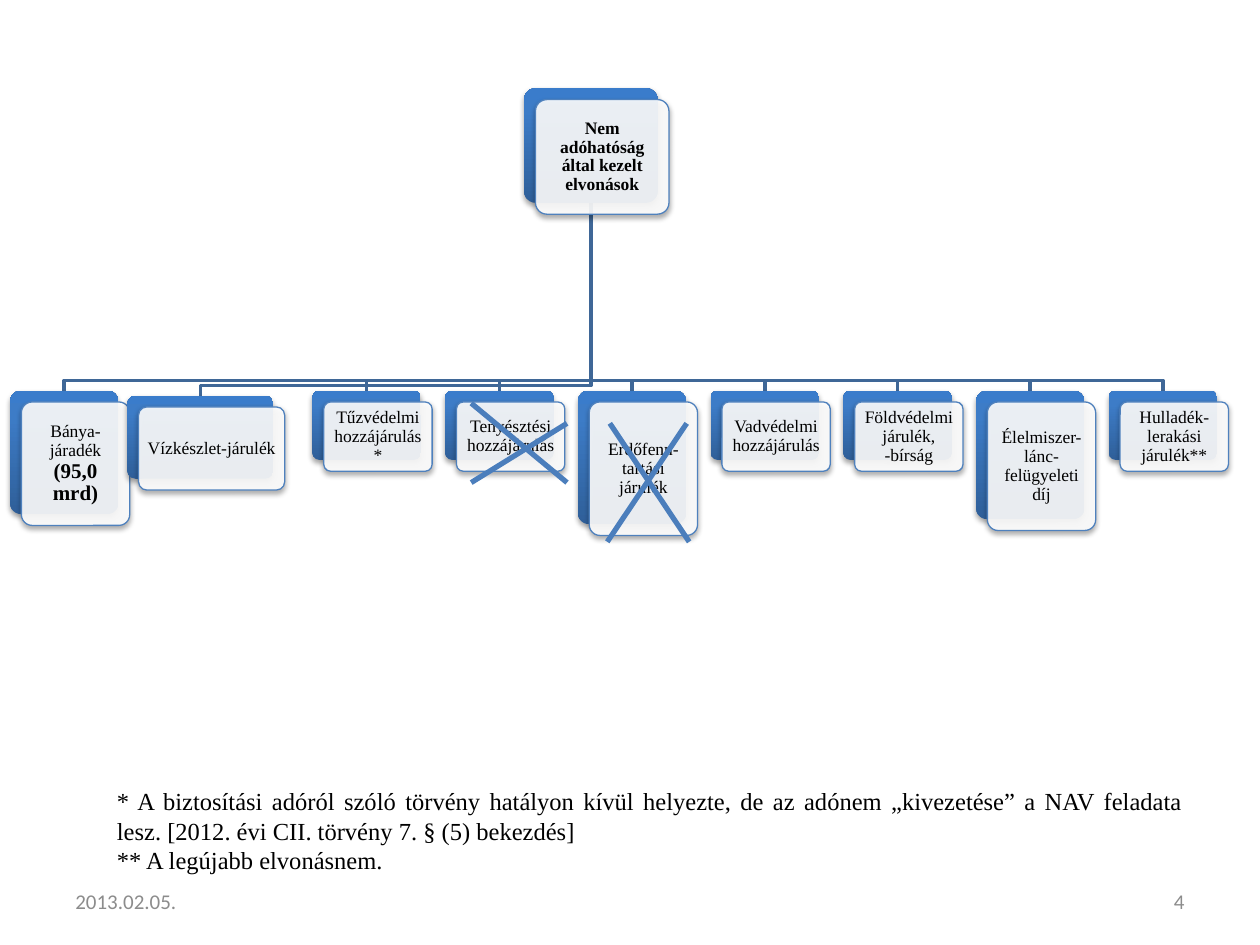
import copy

import pptx
import pptx.dml.color
import pptx.enum.shapes
import pptx.enum.text
import pptx.oxml
import pptx.oxml.ns
import pptx.util

Inches = pptx.util.Inches
Pt = pptx.util.Pt
RGB = pptx.dml.color.RGBColor
Align = pptx.enum.text.PP_ALIGN
Anchor = pptx.enum.text.MSO_ANCHOR
Kind = pptx.enum.shapes.MSO_SHAPE
qn = pptx.oxml.ns.qn
NS = pptx.oxml.ns.nsdecls("a")

# Colours
BLACK = RGB(0x00, 0x00, 0x00)
WHITE = RGB(0xFF, 0xFF, 0xFF)
GREY = RGB(0x8C, 0x8C, 0x8C)
EDGE = RGB(0x4F, 0x81, 0xBD)
LINK = RGB(0x3F, 0x67, 0x97)
CROSS = RGB(0x4B, 0x7E, 0xBC)
STOPS = [(0, RGB(0x2F, 0x5F, 0x99)), (0.8, RGB(0x3D, 0x7C, 0xC7)),
         (1, RGB(0x3A, 0x7C, 0xCB))]

# Text formats
SERIF = {"name": "Times New Roman", "size": Pt(10)}
BOLD = {**SERIF, "bold": True}
BIG = {**BOLD, "size": Pt(12)}
NOTE = {**SERIF, "size": Pt(14)}
FOOT = {"name": "Calibri", "size": Pt(12)}
PAD = {"margin_left": Pt(3), "margin_right": Pt(3), "margin_top": Pt(3),
       "margin_bottom": Pt(3)}

# Chart layout in inches
SHIFT = 0.09
WIDE, LOW = 0.86, 0.55
TOP = 3.1
FIRST, STEP = 2.48, 6.32 / 6
ROOT = (4.16, 0.7, 1.06, 0.91)

# Left, top, width, height and text runs of each child
ROW = [
    (LOW, "Tűzvédelmi hozzájárulás*"),
    (LOW, "Tenyésztési hozzájárulás"),
    (1.06, "Erdőfenn-tartási járulék"),
    (LOW, "Vadvédelmi hozzájárulás"),
    (LOW, "Földvédelmi járulék, -bírság"),
    (1.02, "Élelmiszer-lánc-felügyeleti díj"),
    (LOW, "Hulladék-lerakási járulék**"),
]
KIDS = [
    ((0.08, TOP, WIDE, 0.98),
     [("Bánya-járadék ", SERIF), ("(95,0 mrd)", BIG)]),
    ((1.01, 3.14, 1.16, 0.66), [("Vízkészlet-járulék", SERIF)]),
] + [((FIRST + i * STEP, TOP, WIDE, high), [(text, SERIF)])
     for i, (high, text) in enumerate(ROW)]

NOTES = [
    "* A biztosítási adóról szóló törvény hatályon kívül helyezte, de az "
    "adónem „kivezetése” a NAV feladata lesz. [2012. évi CII. törvény 7. § "
    "(5) bekezdés]",
    "** A legújabb elvonásnem.",
]
# Strokes that strike out two of the children
MARKS = [(3.74, 3.2, 4.5, 3.83), (3.74, 3.83, 4.5, 3.36),
         (4.82, 4.3, 5.45, 3.36), (4.84, 3.36, 5.47, 4.3)]


def style(item, vals):
    for key, val in vals.items():
        setattr(item, key, val)


def write(para, runs, color, **form):
    style(para, form)
    for text, font in runs:
        run = para.add_run()
        run.text = text
        style(run.font, font)
        run.font.color.rgb = color


def shade(shape):
    """Soft shadow straight below the shape."""
    shape._element.spPr.append(pptx.oxml.parse_xml(
        f'<a:effectLst {NS}><a:outerShdw blurRad="{Pt(3.1)}" '
        f'dist="{Pt(1.8)}" dir="5400000" rotWithShape="0">'
        '<a:srgbClr val="000000"><a:alpha val="35000"/></a:srgbClr>'
        '</a:outerShdw></a:effectLst>'))


def panel(slide, box):
    shape = slide.shapes.add_shape(
        Kind.ROUNDED_RECTANGLE, *[Inches(n) for n in box])
    shape.adjustments[0] = 0.1
    return shape


def back(slide, box):
    shape = panel(slide, box)
    fill = shape.fill
    fill.gradient()
    fill.gradient_angle = 90
    stops = shape._element.spPr.find(".//" + qn("a:gsLst"))
    stops.append(copy.deepcopy(stops[-1]))
    for stop, (place, color) in zip(fill.gradient_stops, STOPS):
        stop.position = place
        stop.color.rgb = color
    shape.line.fill.background()
    shade(shape)


def front(slide, box, runs):
    left, top, wide, high = box
    shape = panel(slide, (left + SHIFT, top + SHIFT, wide, high))
    shape.fill.solid()
    shape.fill.fore_color.rgb = WHITE
    color = shape._element.spPr.find(qn("a:solidFill"))[0]
    color.append(pptx.oxml.parse_xml(f'<a:alpha {NS} val="90000"/>'))
    shape.line.color.rgb = EDGE
    shape.line.width = Pt(0.75)
    shade(shape)
    frame = shape.text_frame
    style(frame, {**PAD, "word_wrap": True, "vertical_anchor": Anchor.MIDDLE})
    write(frame.paragraphs[0], runs, BLACK, alignment=Align.CENTER,
          line_spacing=0.9)


def card(slide, box, runs):
    back(slide, box)
    front(slide, box, runs)


def link(slide, box):
    """Elbow line from the root's foot to the top of a child."""
    x = ROOT[0] + ROOT[2] / 2
    y = ROOT[1] + ROOT[3]
    left, top, wide, _ = box
    mid, bend = left + wide / 2, top - 0.08
    spots = [(x, y), (x, bend), (mid, bend), (mid, top)]
    start, *rest = [(Inches(a), Inches(b)) for a, b in spots]
    build = slide.shapes.build_freeform(*start)
    build.add_line_segments(rest, close=False)
    shape = build.convert_to_shape()
    shape.fill.background()
    shape.line.color.rgb = LINK
    shape.line.width = Pt(2)
    shape.shadow.inherit = False


def stroke(slide, ends):
    line = slide.shapes.add_connector(
        pptx.enum.shapes.MSO_CONNECTOR.STRAIGHT, *[Inches(n) for n in ends])
    line.line.color.rgb = CROSS
    line.line.width = Pt(3)
    line._element.spPr.append(pptx.oxml.parse_xml(f"<a:effectLst {NS}/>"))


def label(slide, box, lines, font, color, align, anchor):
    shape = slide.shapes.add_textbox(*[Inches(n) for n in box])
    frame = shape.text_frame
    style(frame, {"word_wrap": True, "vertical_anchor": anchor})
    for i, text in enumerate(lines):
        para = frame.add_paragraph() if i else frame.paragraphs[0]
        write(para, [(text, font)], color, alignment=align)


def main():
    deck = pptx.Presentation()
    style(deck, {"slide_width": Inches(10), "slide_height": Inches(7.5)})
    slide = deck.slides.add_slide(deck.slide_layouts[6])

    # Links lie behind the cards
    for box, _ in reversed(KIDS):
        link(slide, box)
    card(slide, ROOT, [("Nem adóhatóság által kezelt elvonások", BOLD)])
    for box, runs in KIDS:
        card(slide, box, runs)

    # Notes, date and page number
    label(slide, (0.83, 6.19, 8.66, 0.81), NOTES, NOTE, BLACK,
          Align.JUSTIFY, Anchor.TOP)
    label(slide, (0.5, 6.95, 2.33, 0.4), ["2013.02.05."], FOOT, GREY,
          Align.LEFT, Anchor.MIDDLE)
    label(slide, (7.17, 6.95, 2.33, 0.4), ["4"], FOOT, GREY,
          Align.RIGHT, Anchor.MIDDLE)

    # Crossed-out levies
    for ends in MARKS:
        stroke(slide, ends)
    deck.save("out.pptx")


if __name__ == "__main__":
    main()
